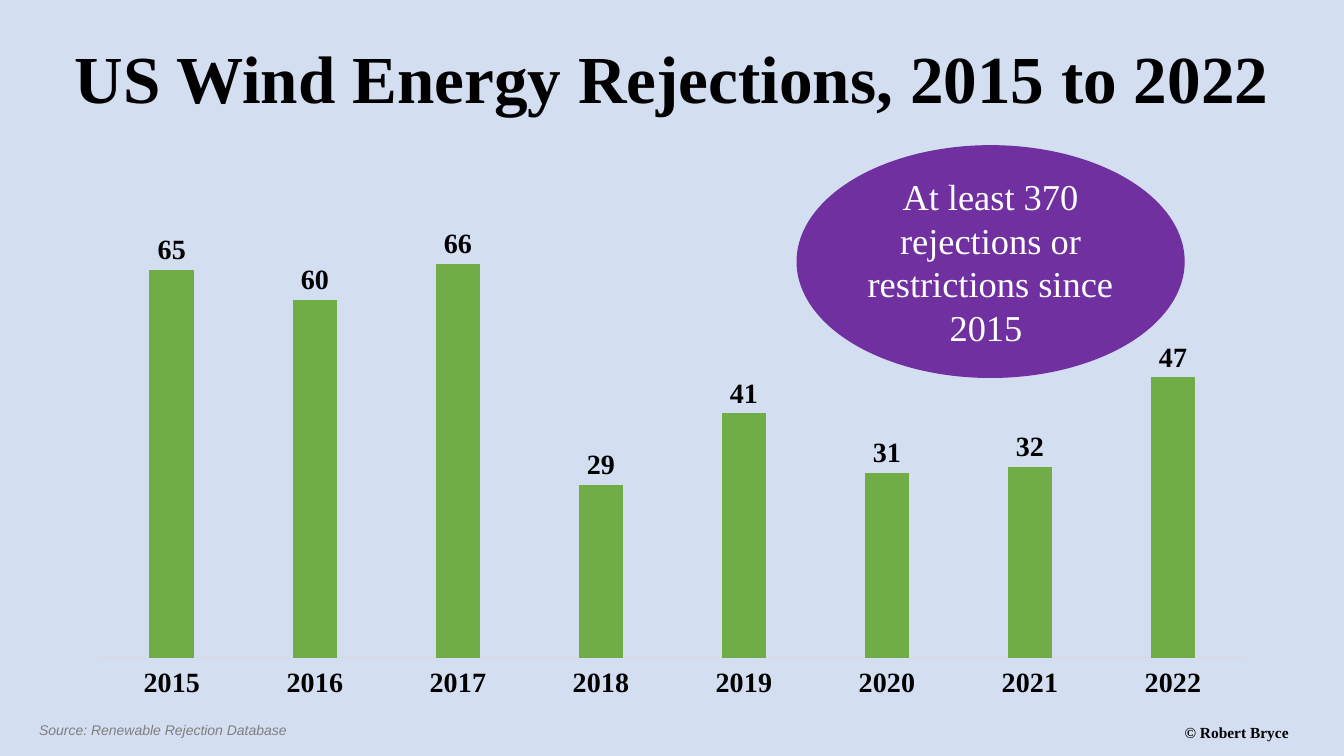
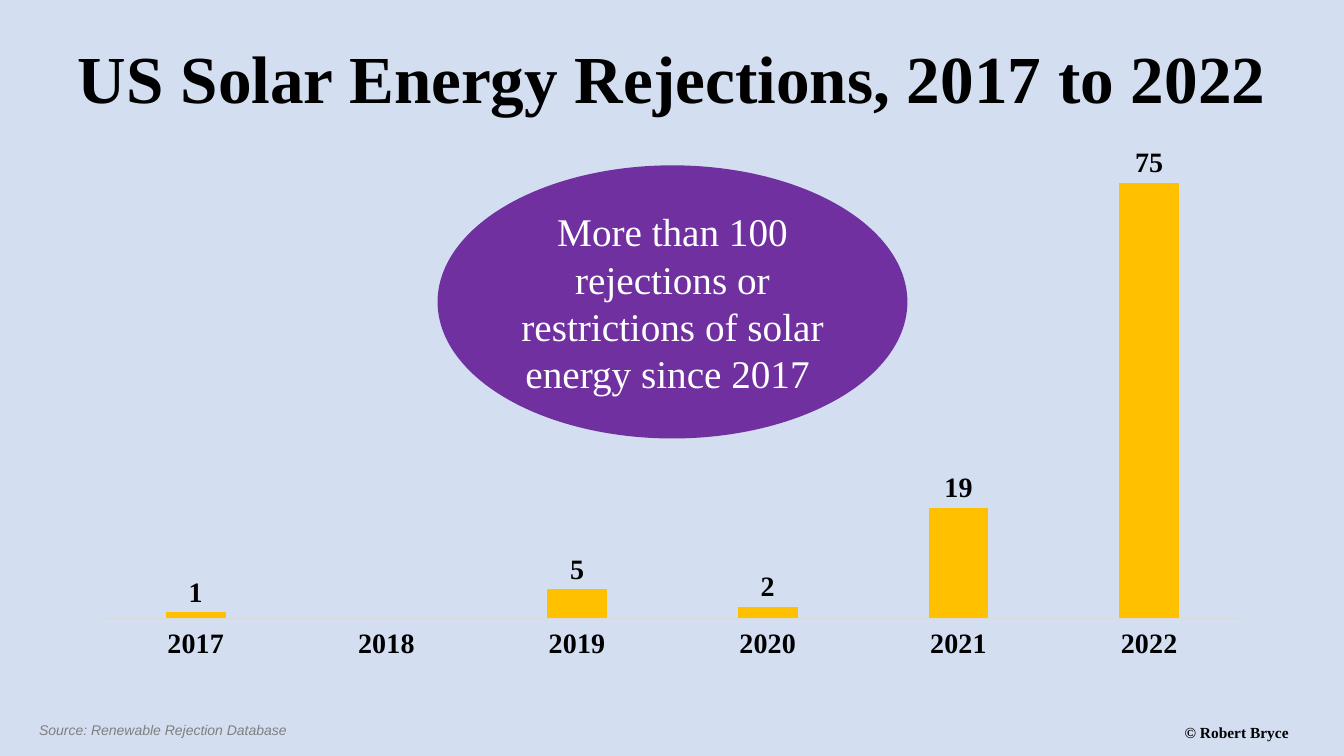
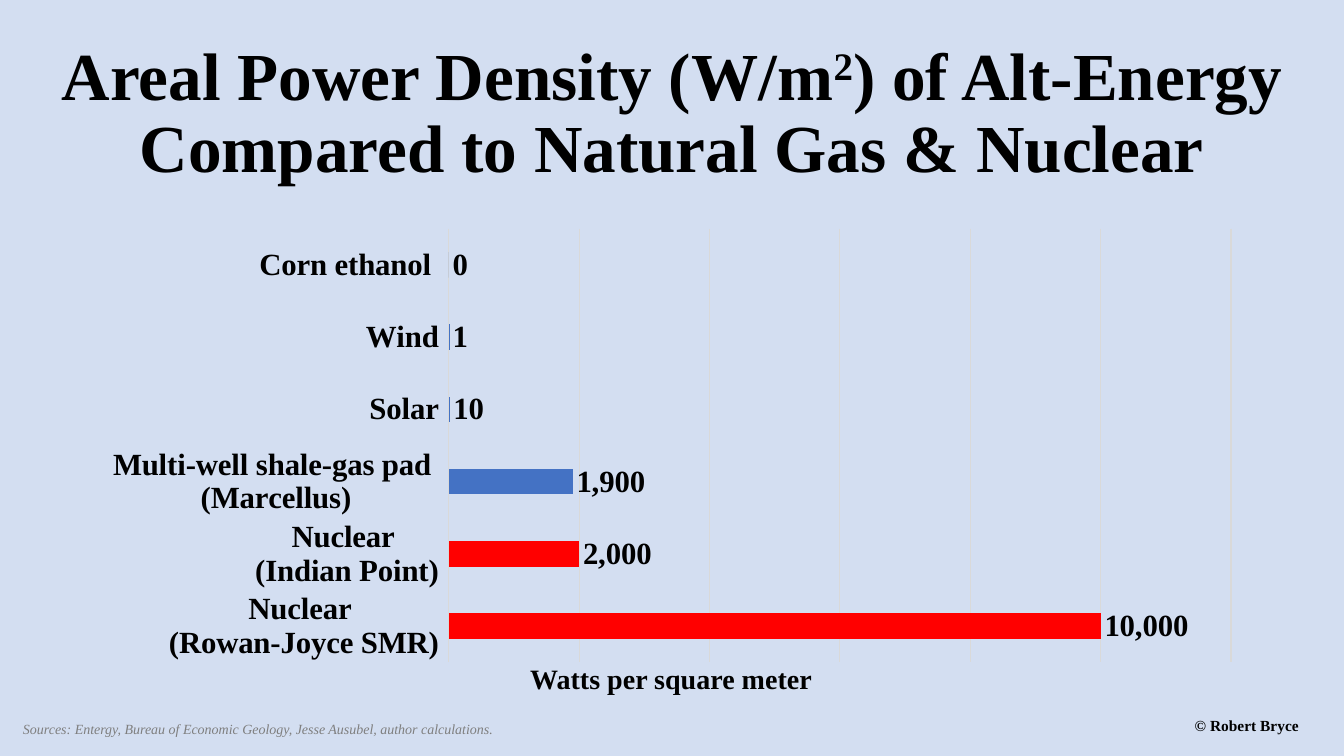
from pptx import Presentation
from pptx.chart.data import CategoryChartData
from pptx.dml.color import RGBColor
from pptx.enum.chart import XL_CHART_TYPE, XL_LABEL_POSITION, XL_TICK_LABEL_POSITION, XL_TICK_MARK
from pptx.enum.shapes import MSO_SHAPE
from pptx.enum.text import MSO_ANCHOR, PP_ALIGN
from pptx.util import Inches, Pt

COLUMN, BAR = XL_CHART_TYPE.COLUMN_CLUSTERED, XL_CHART_TYPE.BAR_CLUSTERED
OUTSIDE_END = XL_LABEL_POSITION.OUTSIDE_END
LABELS_LOW = XL_TICK_LABEL_POSITION.LOW
NO_TICKS = XL_TICK_MARK.NONE
ELLIPSE = MSO_SHAPE.OVAL
TOP, MIDDLE = MSO_ANCHOR.TOP, MSO_ANCHOR.MIDDLE
LEFT, CENTER = PP_ALIGN.LEFT, PP_ALIGN.CENTER

SERIF, SANS = "Times New Roman", "Arial"
COLORS = {
    "background": "D3DEF1", "text": "000000", "source": "7F7F7F",
    "callout": "7030A0", "callout_text": "FFFFFF", "rule": "D9D9D9",
    "wind": "70AD47", "solar": "FFC000", "gas": "4472C4", "nuclear": "FF0000",
}

# Shared layout, in inches: left, top, width, height
W, H = 13.33, 7.5
TITLE_BOX = (0.41, 0.31, W - 0.82, 0.91)
SOURCE_BOX = (0.29, 7.11, 4.36, 0.28)
CREDIT_BOX = (11.65, 7.12, 1.58, 0.35)
CHART_LEFT, CHART_WIDTH = 0.76, 11.82


def color(name):
    return RGBColor.from_string(COLORS[name])


def inches(box):
    return [Inches(v) for v in box]


def style_font(font, size, name="text", bold=False, italic=False, face=SERIF):
    font.name, font.size = face, Pt(size)
    font.bold, font.italic = bold, italic
    font.color.rgb = color(name)


def add_text(s, box, text, size, align=LEFT, anchor=TOP, spacing=1.0, **font):
    """Text with parts marked by ^ alternating between normal and superscript."""
    tf = s.shapes.add_textbox(*inches(box)).text_frame
    tf.word_wrap, tf.vertical_anchor = True, anchor
    p = tf.paragraphs[0]
    p.alignment, p.line_spacing = align, spacing
    for i, part in enumerate(text.split("^")):
        r = p.add_run()
        r.text = part
        if i % 2:
            r.font._element.set("baseline", "30000")
    style_font(p.font, size, **font)


def add_slide(prs, title, source, title_box=TITLE_BOX, source_box=SOURCE_BOX,
              credit_box=CREDIT_BOX, source_face=SANS, spacing=1.0):
    """Background, title and footer."""
    s = prs.slides.add_slide(prs.slide_layouts[6])
    s.background.fill.solid()
    s.background.fill.fore_color.rgb = color("background")
    add_text(s, title_box, title, 48, CENTER, MIDDLE, spacing, bold=True)
    add_text(s, source_box, source, 10, name="source", italic=True, face=source_face)
    add_text(s, credit_box, "© Robert Bryce", 11, bold=True)
    return s


def add_bars(s, box, kind, cats, vals, fill, top_value, gap=219, size=20,
             number_format="General", step=None, point_fills=None):
    """Single-series bar chart with value labels; a step adds gridlines."""
    data = CategoryChartData()
    data.categories = cats
    data.add_series("Series 1", vals)
    chart = s.shapes.add_chart(kind, *inches(box), data).chart
    chart.has_legend = chart.has_title = False
    style_font(chart.font, size, bold=True)

    # Axes
    cat_axis, val_axis = chart.category_axis, chart.value_axis
    cat_axis.major_tick_mark = cat_axis.minor_tick_mark = NO_TICKS
    cat_axis.tick_label_position = LABELS_LOW
    cat_axis.format.line.color.rgb = color("rule")
    cat_axis.format.line.width = Pt(0.75)
    style_font(cat_axis.tick_labels.font, size, bold=True)
    val_axis.minimum_scale, val_axis.maximum_scale = 0, top_value
    val_axis.has_major_gridlines = step is not None
    if step:
        val_axis.major_unit = step
        grid = val_axis.major_gridlines.format.line
        grid.color.rgb, grid.width = color("rule"), Pt(0.75)
    val_axis.visible = False

    # Bars and value labels
    plot = chart.plots[0]
    plot.gap_width, plot.vary_by_categories = gap, False
    series = plot.series[0]
    series.invert_if_negative = False
    fills = [(series, fill)]
    fills += [(series.points[i], name) for i, name in (point_fills or {}).items()]
    for part, name in fills:
        part.format.fill.solid()
        part.format.fill.fore_color.rgb = color(name)
    labels = series.data_labels
    labels.show_value, labels.position = True, OUTSIDE_END
    labels.number_format, labels.number_format_is_linked = number_format, False
    style_font(labels.font, size, bold=True)


def add_callout(s, box, text, size):
    sp = s.shapes.add_shape(ELLIPSE, *inches(box))
    sp.shadow.inherit = False
    sp.fill.solid()
    sp.fill.fore_color.rgb = color("callout")
    sp.line.fill.background()
    tf = sp.text_frame
    tf.word_wrap, tf.vertical_anchor = True, MIDDLE
    p = tf.paragraphs[0]
    p.text, p.alignment = text, CENTER
    style_font(p.font, size, "callout_text")


def rejections_slide(prs, energy, first_year, vals, fill, top_value,
                     chart_top, chart_height, callout_box, callout, callout_size):
    s = add_slide(prs, f"US {energy} Energy Rejections, {first_year} to 2022",
                  "Source: Renewable Rejection Database")
    years = [str(first_year + i) for i in range(len(vals))]
    add_callout(s, callout_box, callout, callout_size)
    add_bars(s, (CHART_LEFT, chart_top, CHART_WIDTH, chart_height), COLUMN,
             years, vals, fill, top_value)


def density_slide(prs):
    s = add_slide(
        prs, "Areal Power Density (W/m^2^) of Alt-Energy Compared to Natural Gas & Nuclear",
        "Sources: Entergy, Bureau of Economic Geology, Jesse Ausubel, author calculations.",
        title_box=(0.41, 0.63, W - 0.82, 1.02), source_box=(0.13, 7.1, 5.2, 0.27),
        credit_box=(11.75, 7.06, 1.58, 0.35), source_face=SERIF, spacing=0.9)
    densities = {
        "Nuclear \n(Rowan-Joyce SMR)": 10000,
        "Nuclear \n(Indian Point)": 2000,
        "Multi-well shale-gas pad \n(Marcellus)": 1900,
        "Solar": 10,
        "Wind": 1,
        "Corn ethanol ": 0,
    }
    add_text(s, (5.16, 6.51, 3.2, 0.44), "Watts per square meter", 20, bold=True)
    add_bars(s, (0.89, 2.18, 11.55, 4.48), BAR, list(densities), list(densities.values()),
             "gas", 12000, gap=182, size=22, number_format="#,##0", step=2000,
             point_fills={0: "nuclear", 1: "nuclear"})


def main():
    prs = Presentation()
    prs.slide_width, prs.slide_height = Inches(W), Inches(H)
    rejections_slide(prs, "Wind", 2015, [65, 60, 66, 29, 41, 31, 32, 47], "wind", 70,
                     2.27, 4.76, (7.9, 1.44, 3.85, 2.31),
                     "At least 370 rejections or restrictions since 2015 ", 26)
    rejections_slide(prs, "Solar", 2017, [1, None, 5, 2, 19, 75], "solar", 80,
                     1.42, 5.23, (4.34, 1.64, 4.66, 2.71),
                     "More than 100 rejections or restrictions of solar energy since 2017 ", 28)
    density_slide(prs)
    prs.save("out.pptx")


if __name__ == "__main__":
    main()
